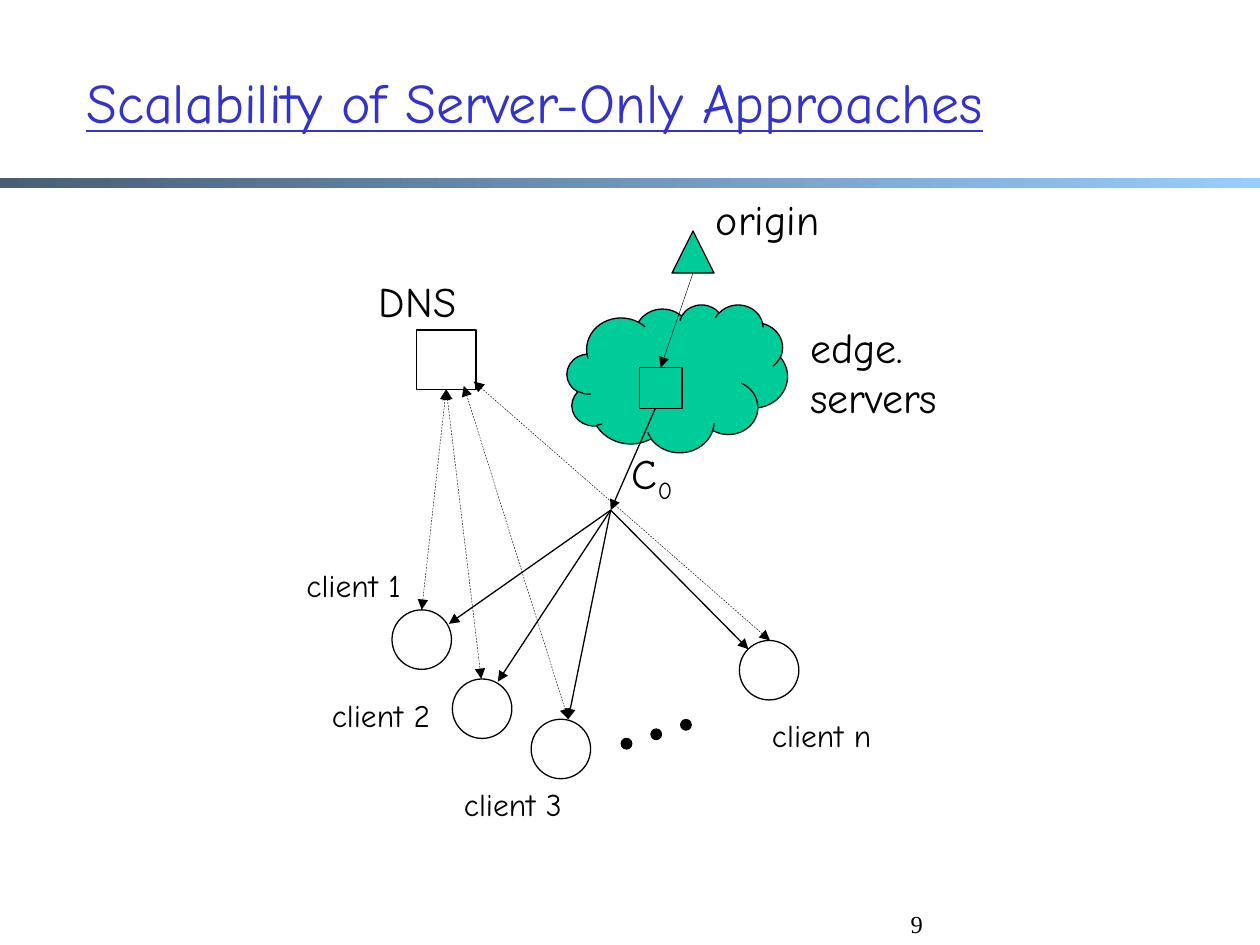
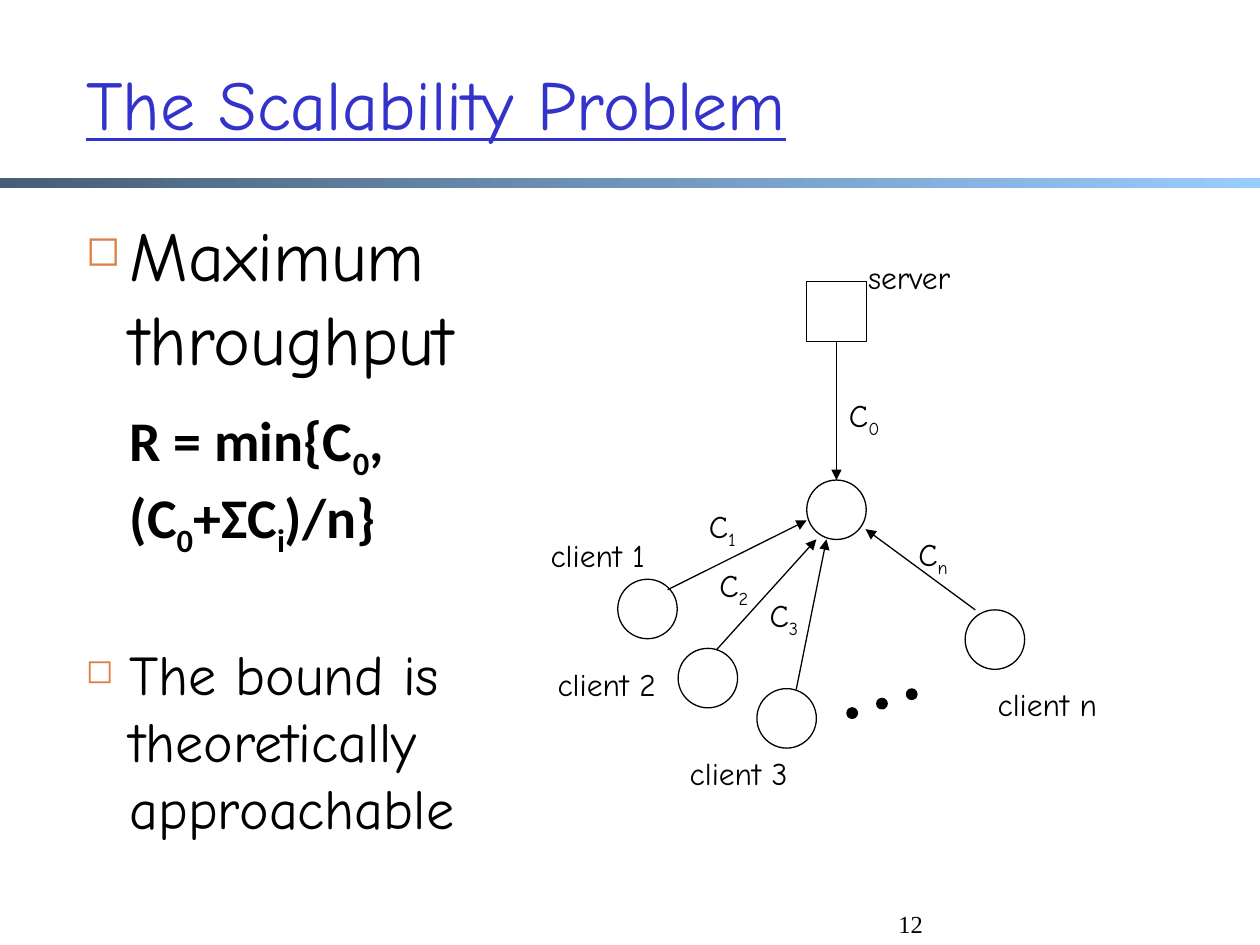
from lxml.etree import SubElement
from pptx import Presentation
from pptx.dml.color import RGBColor
from pptx.enum.dml import MSO_LINE
from pptx.enum.shapes import MSO_CONNECTOR, MSO_SHAPE
from pptx.enum.text import MSO_ANCHOR, MSO_AUTO_SIZE, PP_ALIGN
from pptx.oxml.ns import qn
from pptx.util import Pt

BLACK = RGBColor(0x00, 0x00, 0x00)
TITLE_BLUE = RGBColor(0x33, 0x33, 0xCC)
BAND_DARK = RGBColor(0x47, 0x5E, 0x76)
BAND_LIGHT = RGBColor(0x99, 0xCC, 0xFF)
GREEN = RGBColor(0x00, 0xCC, 0x99)
BULLET_ORANGE = RGBColor(0xDD, 0x80, 0x47)
HAND_FONT, FORMULA_FONT, NUMBER_FONT = "Comic Neue", "Calibri", "Times New Roman"

NODE = 34
DOT = 6
THIN, NORMAL = 0.25, 0.75

# name, circle offset in the row, label offset from its circle
CLIENTS = [
    ("client 1", (0, 0), (-45.5, -28.5)),
    ("client 2", (34.5, 39.5), (-76, 6)),
    ("client 3", (79.5, 62.5), (-45.5, 34)),
    ("client n", (198.5, 17.5), (11.5, 39.5)),
]
FIRST_DOT, DOT_STEP, DOT_COUNT = (131, 73.5), (17, -5.4), 3

HUB = (349, 291.5)
HUB_TARGETS = [(256.5, 356.5), (284.5, 389.5), (324.7, 411), (427.7, 371)]
LOOKUPS = [
    ((255, 222.5), (241, 348.5)),
    ((255, 222.5), (275, 388)),
    ((265, 220.5), (324.7, 411)),
    ((270.7, 218), (440, 366)),
]
EDGE_LABELS = [
    ("DNS", (209.5, 154, 96.5, 29)),
    ("origin", (402, 107.3, 116.5, 37)),
    ("edge. servers", (456, 180, 116.5, 65.5)),
    ("C_0", (354, 252, 51, 29)),
]

# label, label position, arrow start, arrow end
UPLOADS = [
    ("C_0", (478, 223), (478, 195), (478, 274.3)),
    ("C_1", (398, 286), (381.5, 337), (461, 297.4)),
    ("C_2", (404, 319.7), (409.7, 371), (466.5, 308.2)),
    ("C_3", (432.7, 337), (455, 394), (472.3, 308.2)),
    ("C_n", (517.7, 302.4), (557.3, 348.5), (494.6, 302.4)),
]
# text, has bullet, space before, format
POINTS = [
    ("Maximum throughput", True, 7, dict(size=40)),
    ("R = min{C_0_, (C_0_+ΣC_i_)/n}", False, 15,
     dict(size=32, font=FORMULA_FONT, bold=True)),
    ("The bound is theoretically approachable", True, 46, dict(size=32)),
]


def write(para, text, size=18, font=HAND_FONT, color=BLACK, bold=False,
          underline=False, align=PP_ALIGN.LEFT):
    """Write text into a paragraph; underscores toggle subscript."""
    para.alignment = align
    for index, piece in enumerate(text.split("_")):
        if not piece:
            continue
        span = para.add_run()
        span.text = piece
        span.font.size = Pt(size)
        span.font.name = font
        span.font.color.rgb = color
        span.font.bold = bold
        span.font.underline = underline
        if index % 2:
            span._r.get_or_add_rPr().set("baseline", "-25000")


def add_box(page, left, top, width, height, anchor=MSO_ANCHOR.TOP):
    """Add a wrapping text box and return its frame."""
    box = page.shapes.add_textbox(Pt(left), Pt(top), Pt(width), Pt(height))
    box.text_frame.word_wrap = True
    box.text_frame.vertical_anchor = anchor
    return box.text_frame


def add_label(page, text, place, **style):
    """Add a one-paragraph text box."""
    write(add_box(page, *place).paragraphs[0], text, **style)


def add_figure(page, kind, left, top, width, height, fill=None):
    """Add an outlined preset shape, hollow unless a fill is given."""
    shape = page.shapes.add_shape(kind, Pt(left), Pt(top), Pt(width), Pt(height))
    shape.shadow.inherit = False
    if fill is None:
        shape.fill.background()
    else:
        shape.fill.solid()
        shape.fill.fore_color.rgb = fill
    shape.line.color.rgb = BLACK
    shape.line.width = Pt(NORMAL)
    return shape


def add_arrow(page, start, end, width=NORMAL, lookup=False):
    """Add an arrow; a lookup is dashed and points both ways."""
    arrow = page.shapes.add_connector(
        MSO_CONNECTOR.STRAIGHT, *(Pt(value) for value in (*start, *end)))
    arrow.line.color.rgb = BLACK
    arrow.line.width = Pt(width)
    if lookup:
        arrow.line.dash_style = MSO_LINE.DASH
    properties = arrow._element.spPr
    outline = properties.find(qn("a:ln"))
    for end_tag in ("a:headEnd", "a:tailEnd") if lookup else ("a:tailEnd",):
        SubElement(outline, qn(end_tag), type="triangle")
    SubElement(properties, qn("a:effectLst"))


def add_page(deck, title, number, place, size):
    """Add a slide with its title, gradient band and page number."""
    page = deck.slides.add_slide(deck.slide_layouts[5])
    band = add_figure(page, MSO_SHAPE.RECTANGLE, 0, 101.5, 720, 6)
    band.line.fill.background()
    band.fill.gradient()
    band.fill.gradient_angle = 0
    for stop, color, position in zip(
            band.fill.gradient_stops, (BAND_DARK, BAND_LIGHT), (0, 1)):
        stop.color.rgb = color
        stop.position = position
    heading = page.shapes.title
    heading.left, heading.top, heading.width, heading.height = map(Pt, place)
    frame = heading.text_frame
    frame.auto_size = MSO_AUTO_SIZE.NONE
    frame.word_wrap = True
    frame.vertical_anchor = MSO_ANCHOR.MIDDLE
    write(frame.paragraphs[0], title, size=size, color=TITLE_BLUE, underline=True)
    footer = add_box(page, 222.5, 504, 312, 36, anchor=MSO_ANCHOR.BOTTOM)
    write(footer.paragraphs[0], number, size=14, font=NUMBER_FONT,
          align=PP_ALIGN.RIGHT)
    return page


def add_clients(page, left, top, first_shift=0):
    """Add the row of clients with labels and the dots between them."""
    for index, (name, (across, down), (label_x, label_y)) in enumerate(CLIENTS):
        x, y = left + across, top + down
        add_figure(page, MSO_SHAPE.OVAL, x, y, NODE, NODE)
        shift = 0 if index else first_shift
        add_label(page, name, (x + label_x + shift, y + label_y, 79, 29))
    for index in range(DOT_COUNT):
        x, y = (origin + first + index * step for origin, first, step
                in zip((left, top), FIRST_DOT, DOT_STEP))
        add_figure(page, MSO_SHAPE.OVAL, x, y, DOT, DOT, fill=BLACK)


def add_points(page):
    """Add the bulleted statement of the throughput bound."""
    frame = add_box(page, 42, 117.5, 260, 366)
    for index, (text, bulleted, before, style) in enumerate(POINTS):
        para = frame.add_paragraph() if index else frame.paragraphs[0]
        para.space_before = Pt(before)
        write(para, text, **style)
        properties = para._p.get_or_add_pPr()
        properties.set("marL", str(Pt(25)))
        properties.set("indent", str(Pt(-25) if bulleted else 0))
        if bulleted:
            tint = SubElement(properties, qn("a:buClr"))
            SubElement(tint, qn("a:srgbClr"), val=str(BULLET_ORANGE))
            SubElement(properties, qn("a:buSzPct"), val="60000")
            SubElement(properties, qn("a:buChar"), char="◻")
        else:
            SubElement(properties, qn("a:buNone"))


def build_server_only(deck):
    """Build the slide on server-only approaches."""
    page = add_page(deck, "Scalability of Server-Only Approaches", "9",
                    (42, 24, 654, 68), 32)
    add_figure(page, MSO_SHAPE.CLOUD, 324, 174, 126, 84.5, fill=GREEN)
    add_figure(page, MSO_SHAPE.RECTANGLE, 365.3, 210, 24.5, 23.3)
    add_figure(page, MSO_SHAPE.RECTANGLE, 238, 188.5, NODE, NODE)
    add_figure(page, MSO_SHAPE.ISOSCELES_TRIANGLE, 384, 132, 24, 24, fill=GREEN)
    add_clients(page, 224, 348.5, first_shift=-10.5)
    add_arrow(page, (396, 156), (377.5, 210), width=THIN)
    add_arrow(page, (374.5, 233.3), HUB)
    for target in HUB_TARGETS:
        add_arrow(page, HUB, target)
    for start, end in LOOKUPS:
        add_arrow(page, start, end, width=THIN, lookup=True)
    for text, place in EDGE_LABELS:
        add_label(page, text, place, size=24)


def build_problem(deck):
    """Build the slide on the scalability problem."""
    page = add_page(deck, "The Scalability Problem", "12", (42, 13.7, 612, 90), 40)
    add_points(page)
    add_figure(page, MSO_SHAPE.RECTANGLE, 461, 161, NODE, NODE)
    add_figure(page, MSO_SHAPE.OVAL, 461, 274.3, NODE, NODE)
    add_label(page, "server", (489, 144, 96.5, 29))
    add_clients(page, 353, 331)
    for text, position, start, end in UPLOADS:
        add_arrow(page, start, end)
        add_label(page, text, (*position, 51, 29))


def main():
    """Build and save the deck."""
    deck = Presentation()
    deck.slide_width, deck.slide_height = Pt(720), Pt(540)
    build_server_only(deck)
    build_problem(deck)
    deck.save("out.pptx")


if __name__ == "__main__":
    main()
